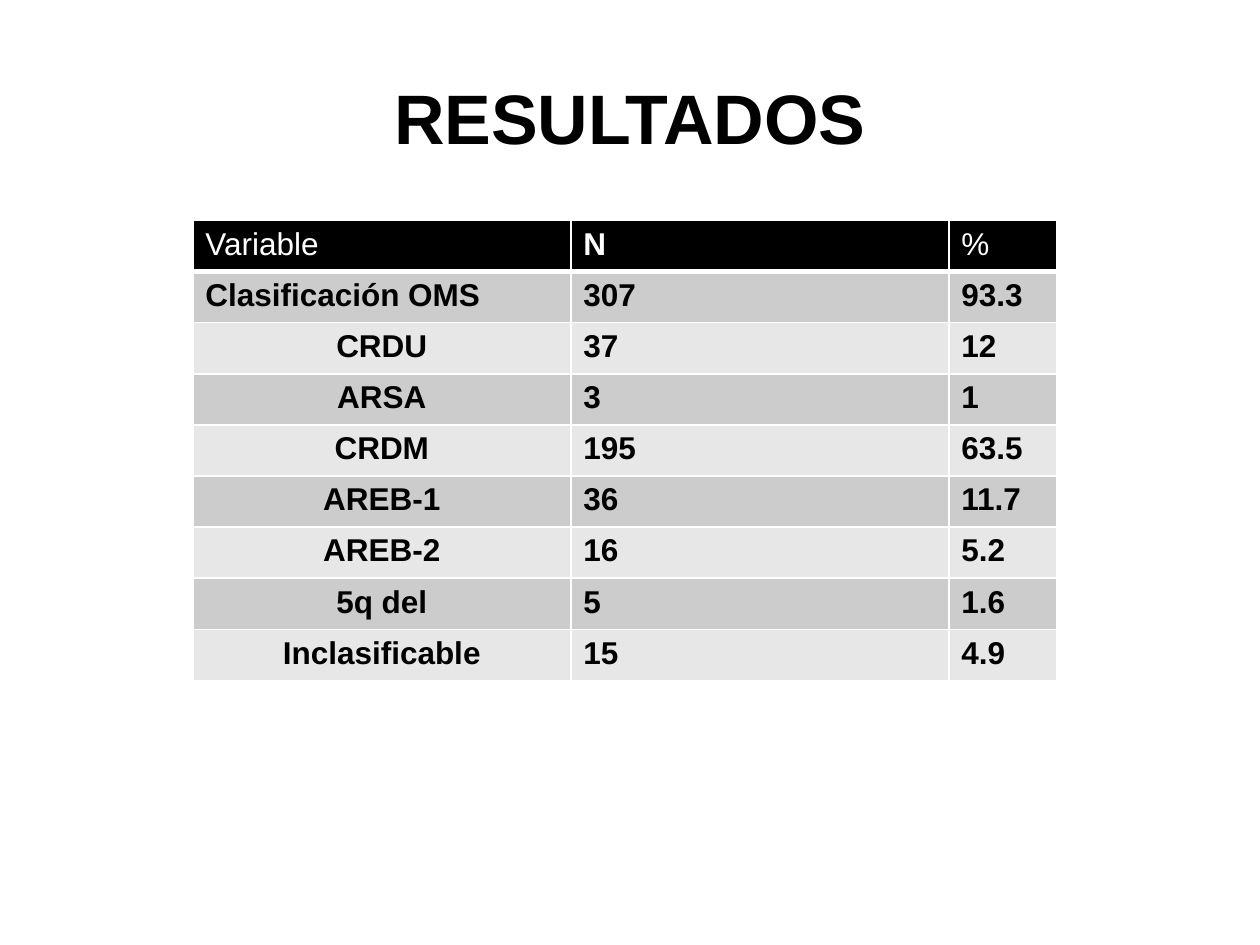
import pptx
import pptx.dml.color
import pptx.enum.text
import pptx.oxml
import pptx.oxml.ns
import pptx.util

ALIGN = pptx.enum.text.PP_ALIGN
ANCHOR = pptx.enum.text.MSO_ANCHOR
BLACK, WHITE = "000000", "FFFFFF"
BANDS = ("CCCCCC", "E7E7E7")

HEADER = ("Variable", "N", "%")
RESULTS = (
    ("Clasificación OMS", "307", "93.3"),
    ("CRDU", "37", "12"),
    ("ARSA", "3", "1"),
    ("CRDM", "195", "63.5"),
    ("AREB-1", "36", "11.7"),
    ("AREB-2", "16", "5.2"),
    ("5q del", "5", "1.6"),
    ("Inclasificable", "15", "4.9"),
)


def color(value):
    return pptx.dml.color.RGBColor.from_string(value)


class ResultsSlide:
    """Holds the style and the current slide; lengths are shares of its size."""

    font = "Arial"
    title_size = 40
    cell_size = 18

    def __init__(self, presentation):
        self.width = presentation.slide_width
        self.height = presentation.slide_height
        self.slide = presentation.slides.add_slide(presentation.slide_layouts[6])

    def box(self, left, top, width, height):
        return (round(left * self.width), round(top * self.height),
                round(width * self.width), round(height * self.height))

    def add_text(self, paragraph, text, size, ink, bold, align):
        paragraph.alignment = align
        run = paragraph.add_run()
        run.text = text
        run.font.name = self.font
        run.font.size = pptx.util.Pt(size)
        run.font.bold = bold
        run.font.color.rgb = color(ink)

    def title(self, text, *area):
        frame = self.slide.shapes.add_textbox(*self.box(*area)).text_frame
        frame.word_wrap = True
        frame.vertical_anchor = ANCHOR.MIDDLE
        self.add_text(frame.paragraphs[0], text, self.title_size, BLACK, True, ALIGN.CENTER)

    def borders(self, cell, bottom):
        properties = cell._tc.get_or_add_tcPr()
        for position, (side, points) in enumerate(
                (("L", 1), ("R", 1), ("T", 1), ("B", bottom))):
            line = pptx.oxml.parse_xml(
                f'<a:ln{side} {pptx.oxml.ns.nsdecls("a")} w="{pptx.util.Pt(points)}">'
                f'<a:solidFill><a:srgbClr val="{WHITE}"/></a:solidFill></a:ln{side}>')
            properties.insert(position, line)

    def cell(self, cell, text, fill, ink=BLACK, bold=True, align=ALIGN.LEFT, bottom=1):
        cell.fill.solid()
        cell.fill.fore_color.rgb = color(fill)
        self.borders(cell, bottom)
        self.add_text(cell.text_frame.paragraphs[0], text, self.cell_size, ink, bold, align)

    def table(self, header, rows, column_shares, *area):
        left, top, width, height = self.box(*area)
        table = self.slide.shapes.add_table(
            len(rows) + 1, len(header), left, top, width, height).table
        for column, share in zip(table.columns, column_shares):
            column.width = round(share * self.width)

        # Header: only the count column is bold
        for index, text in enumerate(header):
            self.cell(table.cell(0, index), text, BLACK, WHITE,
                      bold=text == "N", bottom=3)

        # Body: subtypes are centred under the overall class
        for row, values in enumerate(rows):
            for index, text in enumerate(values):
                subtype = row > 0 and index == 0
                self.cell(table.cell(row + 1, index), text, BANDS[row % 2],
                          align=ALIGN.CENTER if subtype else ALIGN.LEFT)


def main():
    presentation = pptx.Presentation()
    presentation.slide_width = pptx.util.Inches(10)
    presentation.slide_height = pptx.util.Inches(7.5)

    results = ResultsSlide(presentation)
    results.title("RESULTADOS", 0.05, 0.04, 0.9, 1 / 6)
    results.table(HEADER, RESULTS, (0.3, 0.3, 0.086), 0.153, 7 / 30, 0.686, 3.65 / 7.5)

    presentation.save("out.pptx")


if __name__ == "__main__":
    main()
